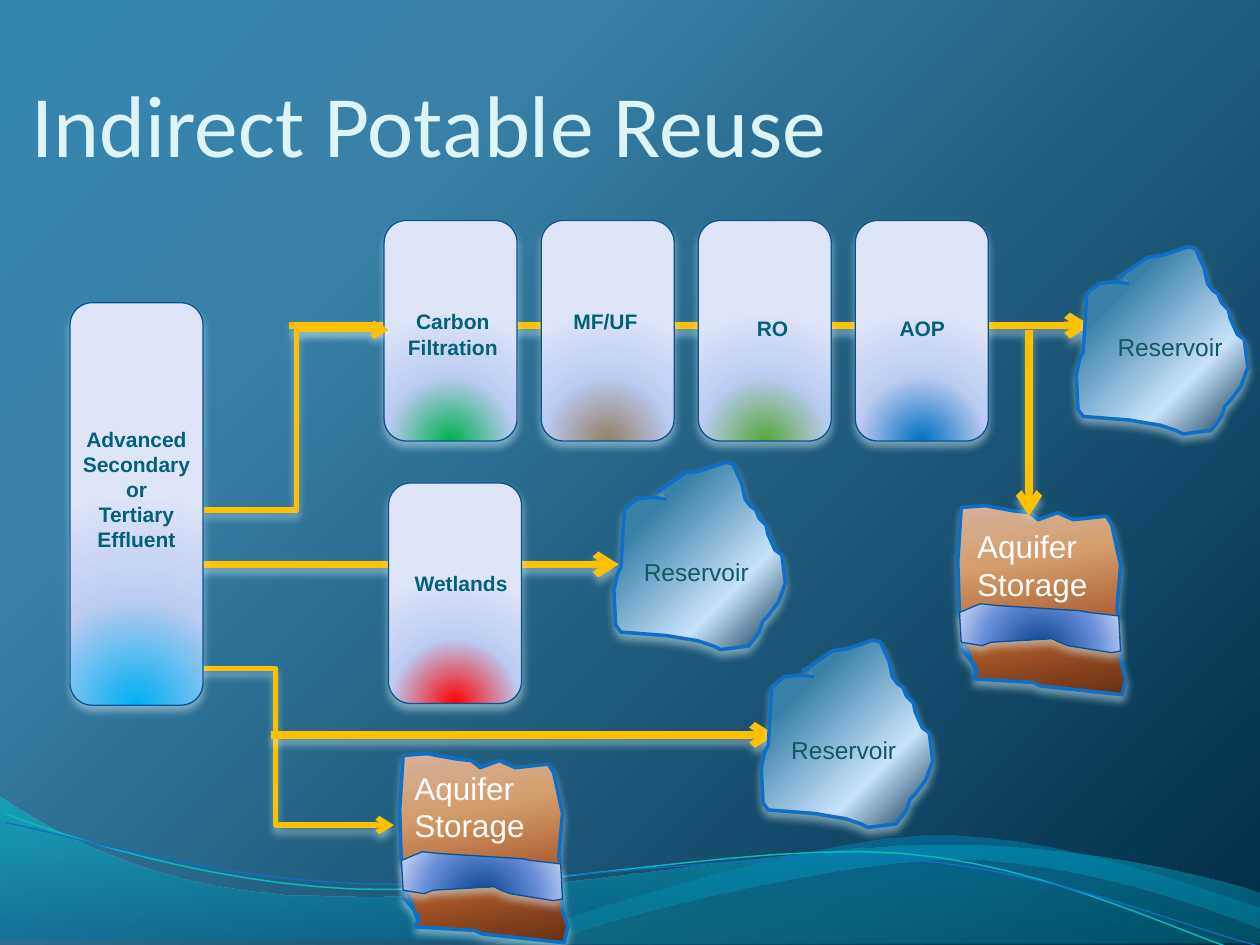
from lxml import etree
from pptx import Presentation
from pptx.dml.color import RGBColor
from pptx.enum.shapes import MSO_CONNECTOR, MSO_SHAPE
from pptx.enum.text import MSO_ANCHOR, PP_ALIGN
from pptx.oxml.ns import qn
from pptx.util import Pt

STRAIGHT, ELBOW = MSO_CONNECTOR.STRAIGHT, MSO_CONNECTOR.ELBOW
BOX = MSO_SHAPE.FLOWCHART_ALTERNATE_PROCESS
LEFT, CENTER = PP_ALIGN.LEFT, PP_ALIGN.CENTER
BOTTOM, TOP = MSO_ANCHOR.BOTTOM, MSO_ANCHOR.TOP
ARROW, EDGE, OUTLINE, LABEL = "FFC000", "095295", "0F6FC6", "04617B"
GLOW, DARK = "DBF5F9", "042747"

# Gradients: (position %, colour, opacity %)
DEEP = [(0, "3686B2", 100), (25, "3981A9", 100), (100, "002D47", 100)]
WATER = [(25, "3981A9", 100), (69, "C8E3FB", 100), (100, "002D47", 100)]
EARTH = [(0, "D6B19C", 100), (30, "D49E6C", 100), (70, "A65528", 100), (100, "663012", 100)]
STREAM = [(0, "003D87", 100), (68, "668DD7", 100), (100, "B3C4EF", 100)]

# Outlines: two numbers are a corner, six are a Bézier curve
WAVES = [
    ([(0, 537), (317.5, 537), (343, 525, 478, 491, 546.5, 491),
      (614, 491, 690, 518.5, 720, 530.5), (720, 510.5),
      (708, 505.5, 626.5, 482.5, 537, 482.5), (448, 482.5, 275, 517, 186, 512),
      (93.5, 511, 34, 477.5, 0, 455)], [(0, "00C6CF", 55), (100, "0074A1", 45)]),
    ([(282, 539), (307.5, 528, 453, 481, 525.5, 477.5),
      (598, 474, 687.5, 508, 720, 518.5), (720, 538.5)],
     [(20, "008BBF", 45), (100, "00A1A9", 30)]),
]
RIPPLES = [
    ([(3, 465), (37.5, 478, 116, 504, 201, 508), (286.5, 512, 427.5, 481, 513.5, 487.5),
      (600, 494, 675.5, 534.5, 718, 546.5)], "0AB8BF", 0.85),
    ([(3, 470), (36.5, 476.5, 120, 502, 206, 505), (291.5, 508.5, 431, 485, 516, 491),
      (602, 497, 677, 530, 719, 540.5)], "0F6FC6", 0.75),
]
LAKE = [(33, 21), (25, 20), (16, 21), (9, 27), (7, 60), (5, 64), (3, 73), (4, 93), (7, 97),
        (33, 99), (51, 102), (60, 105), (64, 107), (80, 105), (84, 100), (86, 97), (88, 91),
        (91, 88), (97, 80), (101, 69), (99, 53), (95, 50), (91, 41), (90, 36), (86, 32),
        (84, 27), (81, 25), (78, 21), (76, 12), (71, 1), (67, 0), (55, 4), (52, 5), (44, 6),
        (41, 8), (28, 17), (27, 17), (30, 16)]
GROUND = [(14, 100), (6, 78), (5, 70), (4, 66), (3, 35), (5, 4), (19, 3), (24, 4), (35, 6),
          (44, 7), (49, 11), (60, 7), (69, 11), (88, 9), (91, 14), (96, 37), (94, 61),
          (96, 92), (99, 102), (97, 111), (50, 106), (46, 104), (12, 102), (14, 96),
          (6, 86), (5, 86), (5, 83), (6, 81)]
BAND = [(4, 64), (16, 59), (25, 60), (73, 63), (78, 64), (95, 66), (96, 86), (91, 87),
        (66, 83), (61, 81), (57, 79), (22, 81), (17, 83), (5, 81)]

# Process steps: box (left, top, height), glow colour, label (left, top, width, lines)
STEP_X, STEP_GAP, STEP_W = 219.5, 89.75, 76
STEPS = [
    ((40, 173, 230), "00B0F0", (40, 240, 76, ["Advanced", "Secondary or", "Tertiary", "Effluent"])),
    ((STEP_X, 126, 126), "00B050", (209.5, 173, 98.5, ["Carbon", "Filtration"])),
    ((STEP_X + STEP_GAP, 126, 126), "948066", (308, 173, 76, ["MF/UF"])),
    ((STEP_X + 2 * STEP_GAP, 126, 126), "55A839", (394, 176.5, 95, ["RO"])),
    ((STEP_X + 3 * STEP_GAP, 126, 126), "0070C0", (489, 176.5, 76, ["AOP"])),
    ((222, 276, 126), "FF0000", (225.5, 322.5, 76, ["Wetlands"])),
]

prs = Presentation()
prs.slide_width, prs.slide_height = Pt(720), Pt(540)
s = prs.slides.add_slide(prs.slide_layouts[6])


def rgb(color):
    return RGBColor.from_string(color)


def add(parent, tag, **attrs):
    return etree.SubElement(parent, qn(tag), {k: str(v) for k, v in attrs.items()})


def add_color(parent, color, opacity):
    add(add(parent, "a:srgbClr", val=color), "a:alpha", val=opacity * 1000)


def gradient(fill, parent, stops, angle=None, center=None):
    """Linear at an angle, or circular around a center (x %, y %)."""
    fill.gradient()
    grad = parent.find(qn("a:gradFill"))
    for child in list(grad):
        grad.remove(child)
    gs_list = add(grad, "a:gsLst")
    for pos, color, opacity in stops:
        add_color(add(gs_list, "a:gs", pos=pos * 1000), color, opacity)
    if center:
        x, y = (v * 1000 for v in center)
        add(add(grad, "a:path", path="circle"), "a:fillToRect",
            l=x, t=y, r=100000 - x, b=100000 - y)
    else:
        add(grad, "a:lin", ang=angle * 60000, scaled=0)


def shadow(props, color=GLOW):
    for old in props.findall(qn("a:effectLst")):
        props.remove(old)
    outer = add(add(props, "a:effectLst"), "a:outerShdw", blurRad=Pt(4.5), dist=Pt(3),
                dir=5400000, algn="ctr", rotWithShape=0)
    add_color(outer, color, 48)


def paint(sp, stops, line=None, width=0.75, **direction):
    sp.shadow.inherit = False
    if stops:
        gradient(sp.fill, sp._element.spPr, stops, **direction)
    else:
        sp.fill.background()
    if line:
        sp.line.color.rgb = rgb(line)
        sp.line.width = Pt(width)
    else:
        sp.line.fill.background()


def outline(parts, x=0, y=0, close=False, steps=12):
    pts = [parts[0]]
    for part in parts[1:]:
        if len(part) == 2:
            pts.append(part)
            continue
        knots = [pts[-1], part[:2], part[2:4], part[4:]]
        for t in (i / steps for i in range(1, steps + 1)):
            w = ((1 - t) ** 3, 3 * t * (1 - t) ** 2, 3 * t * t * (1 - t), t ** 3)
            pts.append(tuple(sum(a * k[axis] for a, k in zip(w, knots)) for axis in (0, 1)))
    pts = [(Pt(x + px), Pt(y + py)) for px, py in pts]
    fb = s.shapes.build_freeform(*pts[0])
    fb.add_line_segments(pts[1:], close=close)
    return fb.convert_to_shape()


def text(x, y, w, h, lines, size, color, font="Arial", bold=False, align=LEFT, anchor=TOP):
    tb = s.shapes.add_textbox(Pt(x), Pt(y), Pt(w), Pt(h))
    tf = tb.text_frame
    tf.word_wrap, tf.vertical_anchor = True, anchor
    tf.text = "\n".join(lines)
    for p in tf.paragraphs:
        p.alignment = align
        p.font.name, p.font.size, p.font.bold = font, Pt(size), bold
        p.font.color.rgb = rgb(color)
    return tf


def arrow(x1, y1, x2, y2, kind=STRAIGHT):
    c = s.shapes.add_connector(kind, Pt(x1), Pt(y1), Pt(x2), Pt(y2))
    c.line.color.rgb = rgb(ARROW)
    c.line.width = Pt(4.25 if kind == STRAIGHT else 3)
    add(c.line._get_or_add_ln(), "a:tailEnd", type="arrow")
    shadow(c._element.spPr)


def reservoir(x, y, dx=13, dy=50.5):
    sp = outline(LAKE, x, y)
    paint(sp, WATER, OUTLINE, 2, angle=45)
    shadow(sp._element.spPr)
    text(x + dx, y + dy, 76, 24.5, ["Reservoir"], 14, "115964")


def aquifer(x, y, dx, dy):
    ground, band = outline(GROUND, x, y), outline(BAND, x, y, close=True)
    paint(ground, EARTH, OUTLINE, 2, angle=80)
    paint(band, STREAM, EDGE, center=(50, 130))
    for sp in (ground, band):
        shadow(sp._element.spPr)
    text(x + dx, y + dy, 80, 51, ["Aquifer", "Storage"], 18, "FFFFFF")


# Background and waves
bg_fill = s.background.fill
bg_fill.solid()
gradient(bg_fill, s._element.cSld.find(qn("p:bg")).find(qn("p:bgPr")), DEEP, angle=45)
for parts, stops in WAVES:
    paint(outline(parts, close=True), stops, angle=90)
for parts, color, width in RIPPLES:
    paint(outline(parts), None, color, width)

# Title
tf = text(18, 10, 654, 90, ["Indirect Potable Reuse"], 50, "DBF5F9", "Calibri", anchor=BOTTOM)
tf.margin_left = tf.margin_right = tf.margin_bottom = 0
shadow(tf.paragraphs[0].runs[0]._r.get_or_add_rPr(), DARK)

# Flows that run behind the steps
arrow(165, 186, 623, 186)
arrow(90, 382, 225, 471.5, ELBOW)
arrow(65.5, 322.5, 353.5, 322.5)

# Process steps
for (x, y, h), color, (tx, ty, tw, lines) in STEPS:
    sp = s.shapes.add_shape(BOX, Pt(x), Pt(y), Pt(STEP_W), Pt(h))
    paint(sp, [(0, color, 100), (50, "BBCBF2", 100), (100, "DEE5F8", 100)], EDGE,
          center=(50, 100))
    shadow(sp._element.spPr)
    text(tx, ty, tw, 7.2 + 14.4 * len(lines), lines, 12, LABEL, bold=True, align=CENTER)

# Destinations and the flows in front
arrow(116.5, 291.5, 222, 188.5, ELBOW)
reservoir(612, 141, 19.5, 45)
reservoir(347.8, 264.2)
aquifer(544.3, 286, 7, 11.5)
aquifer(225.4, 427.7, 4.3, 8)
arrow(588, 188.5, 588, 295)
arrow(155, 420, 443, 420)
reservoir(432, 365.8)

prs.save("out.pptx")
